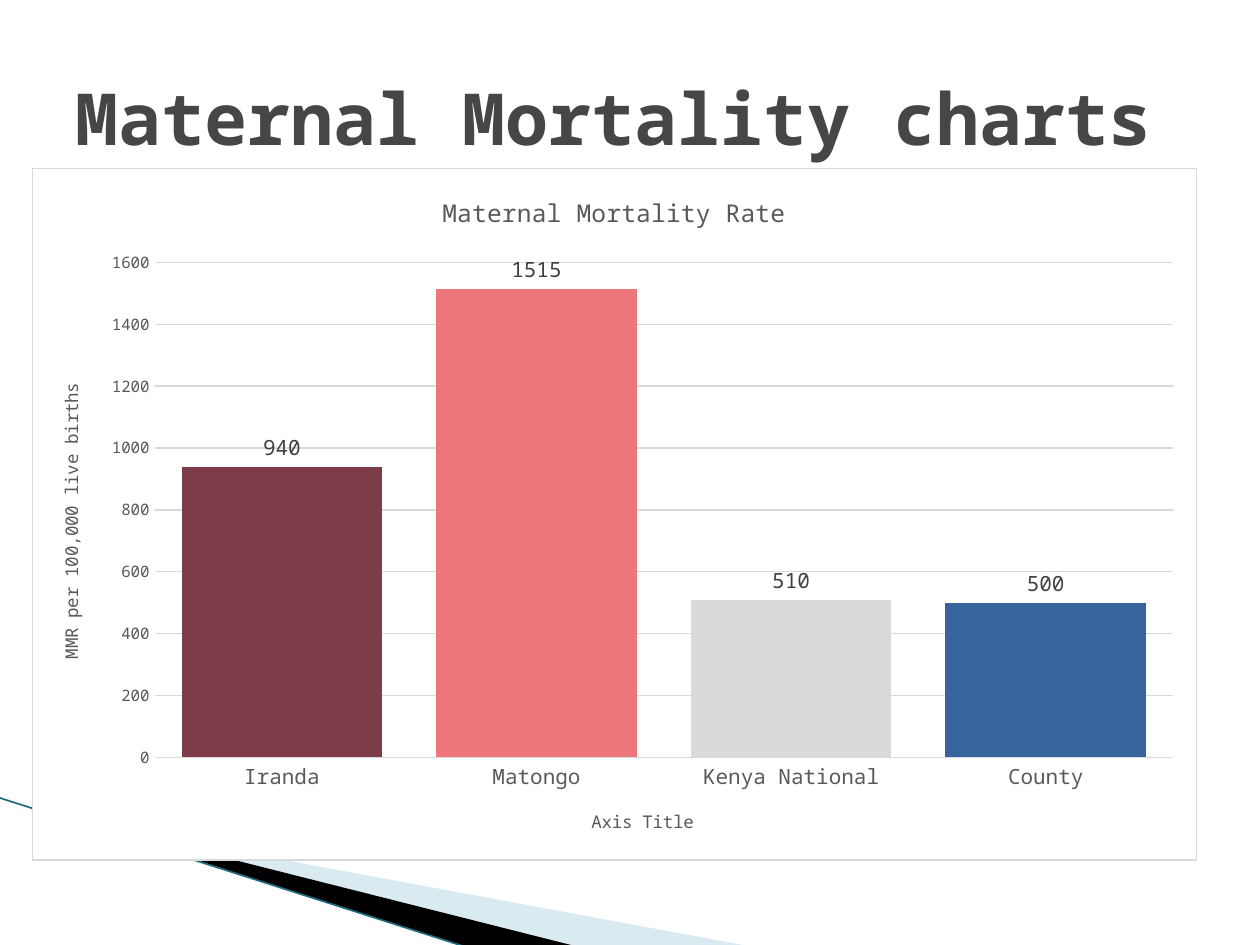
"""Build the maternal mortality chart slide."""
import pptx
import pptx.chart.data
import pptx.dml.color
import pptx.enum.chart
import pptx.enum.shapes
import pptx.enum.text
import pptx.oxml
import pptx.oxml.ns
import pptx.oxml.xmlchemy
import pptx.util
from pptx.util import Inches

FONT = "Noto Sans Mono"
HUES = {"title": "464646", "text": "595959", "label": "404040", "grid": "D9D9D9",
        "pale": "A0CBDC", "black": "000000", "edge": "1B6C80", "base": "2DA2BF",
        "white": "FFFFFF"}
DATA = [("Iranda", 940, "7D3C4A"), ("Matongo", 1515, "EC767C"),
        ("Kenya National", 510, "D9D9D9"), ("County", 500, "39639D")]
WEDGES = [("pale", 40, [(0.55, 6.51), (5.95, 7.51), (4.56, 7.51), (0.55, 6.5)]),
          ("black", 100, [(0.53, 6.49), (4.57, 7.51), (3.72, 7.52), (0.54, 6.5)])]
EDGE = (-0.01, 6.33, 3.71, 7.52)
TITLE_BOX = (0.5, 0.3, 9, 1.25)
CHART_BOX = (0.25, 1.33, 9.25, 5.5)


def color(name):
    return pptx.dml.color.RGBColor.from_string(HUES.get(name, name))


def style(font, size, hue, bold=False):
    font.name, font.size, font.bold = FONT, pptx.util.Pt(size), bold
    font.color.rgb = color(hue)


def write(frame, text, size=10, hue="text", bold=False):
    run = frame.paragraphs[0].add_run()
    run.text = text
    style(run.font, size, hue, bold)


def paint(fill, hue):
    fill.solid()
    fill.fore_color.rgb = color(hue)


def rule(line, hue, width=0.75):
    line.color.rgb = color(hue)
    line.width = pptx.util.Pt(width)


def add_wedge(shapes, hue, alpha, points):
    spots = [(Inches(x), Inches(y)) for x, y in points]
    pen = shapes.build_freeform(*spots[0])
    pen.add_line_segments(spots[1:], close=True)
    wedge = pen.convert_to_shape()
    wedge.shadow.inherit = False
    paint(wedge.fill, hue)
    wedge.line.fill.background()
    if alpha < 100:
        tint = wedge._element.spPr.find(".//" + pptx.oxml.ns.qn("a:srgbClr"))
        node = pptx.oxml.xmlchemy.OxmlElement("a:alpha")
        node.set("val", str(alpha * 1000))
        tint.append(node)


def add_edge(shapes):
    edge = shapes.add_connector(pptx.enum.shapes.MSO_CONNECTOR.STRAIGHT, *map(Inches, EDGE))
    rule(edge.line, "edge", 0.95)
    edge._element.spPr.append(pptx.oxml.xmlchemy.OxmlElement("a:effectLst"))


def add_title(shapes):
    frame = shapes.add_textbox(*map(Inches, TITLE_BOX)).text_frame
    frame.word_wrap = True
    frame.vertical_anchor = pptx.enum.text.MSO_ANCHOR.MIDDLE
    write(frame, "Maternal Mortality charts", size=41, hue="title", bold=True)


def style_axis(axis, title, size):
    write(axis.axis_title.text_frame, title)
    axis.major_tick_mark = axis.minor_tick_mark = pptx.enum.chart.XL_TICK_MARK.NONE
    style(axis.tick_labels.font, size, "text")


def frame_chart(chart):
    spot = pptx.oxml.parse_xml(
        f'<c:spPr {pptx.oxml.ns.nsdecls("c", "a")}>'
        f'<a:solidFill><a:srgbClr val="{HUES["white"]}"/></a:solidFill>'
        f'<a:ln w="{pptx.util.Pt(0.75)}"><a:solidFill><a:srgbClr val="{HUES["grid"]}"/>'
        '</a:solidFill></a:ln></c:spPr>')
    chart._chartSpace.find(pptx.oxml.ns.qn("c:chart")).addnext(spot)


def add_chart(shapes):
    data = pptx.chart.data.CategoryChartData(number_format="0")
    names, values, hues = zip(*DATA)
    data.categories = names
    data.add_series("Series 1", values)
    kind = pptx.enum.chart.XL_CHART_TYPE.COLUMN_CLUSTERED
    chart = shapes.add_chart(kind, *map(Inches, CHART_BOX), data).chart
    style(chart.font, 10, "black")
    chart.has_legend = False
    write(chart.chart_title.text_frame, "Maternal Mortality Rate", size=14)
    frame_chart(chart)

    style_axis(chart.category_axis, "Axis Title", 12)
    rule(chart.category_axis.format.line, "grid")
    scale = chart.value_axis
    style_axis(scale, "MMR per 100,000 live births", 9)
    scale.minimum_scale, scale.maximum_scale, scale.major_unit = 0, 1600, 200
    scale.format.line.fill.background()
    rule(scale.major_gridlines.format.line, "grid")

    plot = chart.plots[0]
    plot.gap_width, plot.overlap, plot.vary_by_categories = 27, 69, False
    bars = plot.series[0]
    paint(bars.format.fill, "base")
    for i, hue in enumerate(hues):
        paint(bars.points[i].format.fill, hue)
    labels = bars.data_labels
    labels.show_value = True
    labels.number_format, labels.number_format_is_linked = "0", False
    labels.position = pptx.enum.chart.XL_LABEL_POSITION.OUTSIDE_END
    style(labels.font, 12, "label")


def main():
    deck = pptx.Presentation()
    deck.slide_width, deck.slide_height = Inches(10), Inches(7.5)
    shapes = deck.slides.add_slide(deck.slide_layouts[6]).shapes
    for wedge in WEDGES:
        add_wedge(shapes, *wedge)
    add_edge(shapes)
    add_title(shapes)
    add_chart(shapes)
    deck.save("out.pptx")


if __name__ == "__main__":
    main()
